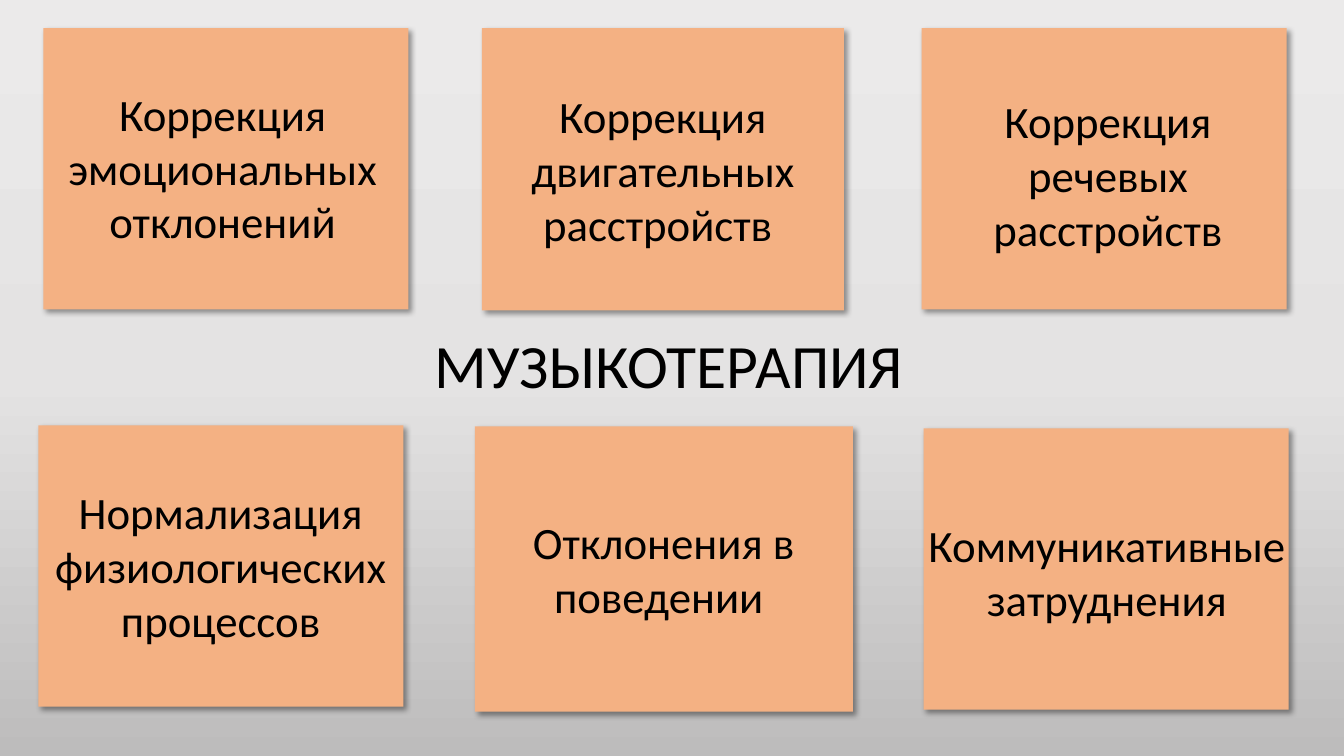
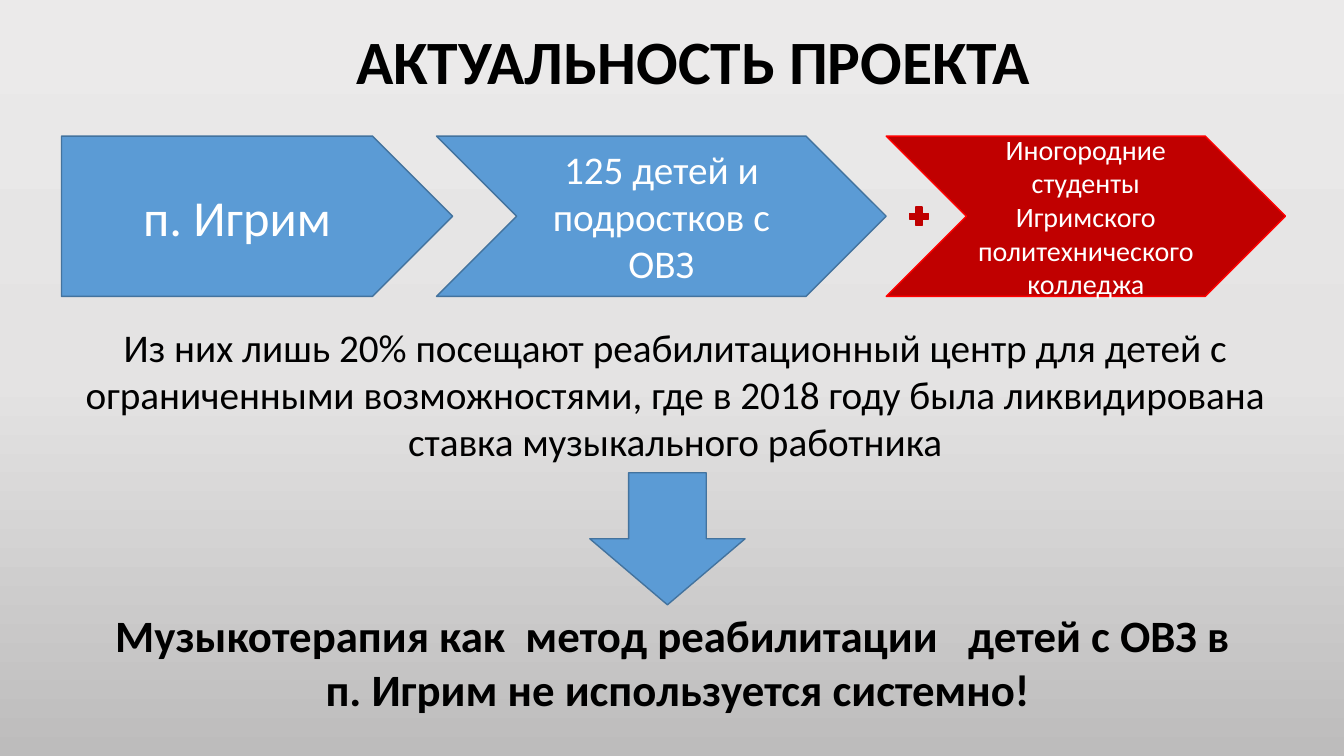
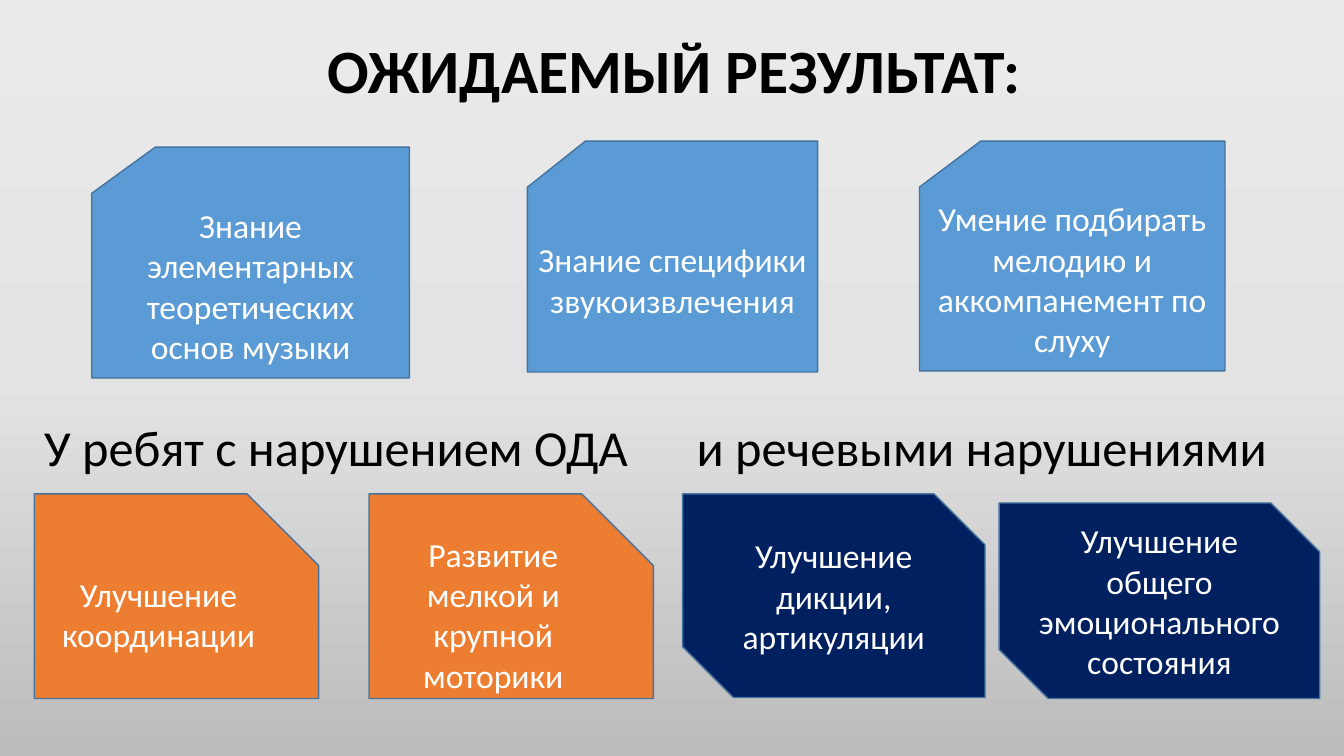
from copy import deepcopy

from lxml import etree
from pptx import Presentation
from pptx.dml.color import RGBColor
from pptx.enum.shapes import MSO_SHAPE
from pptx.enum.text import MSO_ANCHOR, MSO_AUTO_SIZE, PP_ALIGN
from pptx.oxml.ns import qn
from pptx.util import Emu, Pt

EMU_PER_PX = 9144
SLIDE_WIDTH, SLIDE_HEIGHT = 1333, 750
BLANK_LAYOUT = 6
FONT = "Calibri"

BLACK = RGBColor(0x00, 0x00, 0x00)
WHITE = RGBColor(0xFF, 0xFF, 0xFF)
PEACH = RGBColor(0xF4, 0xB1, 0x83)
BLUE = RGBColor(0x5B, 0x9B, 0xD5)
BLUE_EDGE = RGBColor(0x43, 0x73, 0x9E)
DARK_RED = RGBColor(0xC0, 0x00, 0x00)
RED = RGBColor(0xFF, 0x00, 0x00)
ORANGE = RGBColor(0xED, 0x7D, 0x31)
NAVY = RGBColor(0x00, 0x20, 0x60)
BACKDROP = (
    (0, RGBColor(0xEB, 0xEA, 0xEA)),
    (0.5, RGBColor(0xE4, 0xE3, 0xE3)),
    (1, RGBColor(0xBD, 0xBC, 0xBC)),
)

RECTANGLE = MSO_SHAPE.RECTANGLE
PENTAGON = MSO_SHAPE.PENTAGON
CHEVRON = MSO_SHAPE.CHEVRON
PLUS = MSO_SHAPE.MATH_PLUS
DOWN_ARROW = MSO_SHAPE.DOWN_ARROW
PUNCHED_CARD = MSO_SHAPE.FLOWCHART_CARD
SNIP_ONE = MSO_SHAPE.SNIP_1_RECTANGLE
SNIP_DIAGONAL = MSO_SHAPE.SNIP_2_DIAG_RECTANGLE
MIDDLE, TOP = MSO_ANCHOR.MIDDLE, MSO_ANCHOR.TOP
CENTER, LEFT = PP_ALIGN.CENTER, PP_ALIGN.LEFT
GROW, FIXED = MSO_AUTO_SIZE.SHAPE_TO_FIT_TEXT, MSO_AUTO_SIZE.NONE


def px(*lengths):
    """Turn pixel lengths into EMU."""
    return [Emu(length * EMU_PER_PX) for length in lengths]


def assign(target, values):
    """Set each named attribute on the target."""
    for name, value in values.items():
        setattr(target, name, value)


def paint_backdrop(master):
    """Give the slide master its three-stop vertical gradient."""
    fill = master.background.fill
    fill.gradient()
    fill.gradient_angle = 270
    stop_list = master.element.find(".//" + qn("a:gsLst"))
    stop_list.append(deepcopy(stop_list[-1]))
    for stop, (position, color) in zip(fill.gradient_stops, BACKDROP):
        stop.position = position
        stop.color.rgb = color


def write(holder, text, size, color=BLACK, bold=False, align=CENTER,
          spacing=None, **frame_format):
    """Write text into a holder, one paragraph per line."""
    frame = holder.text_frame
    assign(frame, {"word_wrap": True, "vertical_anchor": MIDDLE,
                   "auto_size": FIXED, **frame_format})
    frame.text = text
    for paragraph in frame.paragraphs:
        assign(paragraph, {"alignment": align, "line_spacing": spacing})
        for run in paragraph.runs:
            assign(run.font, {"name": FONT, "size": Pt(size), "bold": bold})
            run.font.color.rgb = color


def add_title(slide, box, text):
    """Add a bold slide title."""
    write(slide.shapes.add_textbox(*px(*box)), text, 44, bold=True, spacing=0.9)


def add_caption(slide, box, text, size, bold=False):
    """Add centred wrapped text without a shape."""
    write(slide.shapes.add_textbox(*px(*box)), text, size, bold=bold,
          vertical_anchor=TOP, auto_size=GROW)


def add_heading(slide, box, text, size):
    """Add a one-line heading that does not wrap."""
    write(slide.shapes.add_textbox(*px(*box)), text, size, align=LEFT,
          vertical_anchor=TOP, auto_size=GROW, word_wrap=False)


def add_figure(slide, kind, box, fill, edge=BLUE_EDGE, text="", size=24,
               cuts=()):
    """Add a filled, outlined shape with white text."""
    figure = slide.shapes.add_shape(kind, *px(*box))
    figure.shadow.inherit = False
    figure.fill.solid()
    figure.fill.fore_color.rgb = fill
    figure.line.color.rgb = edge
    figure.line.width = Pt(1)
    for index, cut in enumerate(cuts):
        figure.adjustments[index] = cut
    if text:
        write(figure, text, size, WHITE)


def add_card(slide, box, text=""):
    """Add a peach card with a soft shadow."""
    card = slide.shapes.add_shape(RECTANGLE, *px(*box))
    card.shadow.inherit = False
    card.fill.solid()
    card.fill.fore_color.rgb = PEACH
    card.line.fill.background()
    effects = card.element.spPr.find(qn("a:effectLst"))
    shadow = etree.SubElement(
        effects, qn("a:outerShdw"), blurRad=str(Pt(4)), dist=str(Pt(3)),
        dir="2700000", algn="tl", rotWithShape="0")
    tint = etree.SubElement(shadow, qn("a:srgbClr"), val=str(BLACK))
    etree.SubElement(tint, qn("a:alpha"), val="40000")
    if text:
        write(card, text, 32)


def build_therapy(slide):
    """Show the six fields of music therapy."""
    for left, top in ((43, 28), (914, 28), (38, 422), (916, 425)):
        add_card(slide, (left, top, 362, 279))
    add_card(slide, (478, 28, 359, 280), "Коррекция двигательных расстройств ")
    add_card(slide, (471, 423, 375, 283), "Отклонения в поведении ")
    captions = (
        ((54, 81, 334, 172), "Коррекция эмоциональных отклонений"),
        ((942, 88, 314, 172), "Коррекция речевых расстройств"),
        ((40, 476, 358, 172), "Нормализация физиологических процессов"),
        ((905, 509, 386, 118), "Коммуникативные затруднения"),
    )
    for box, text in captions:
        add_caption(slide, box, text, 32)
    add_heading(slide, (421, 319, 490, 84), "МУЗЫКОТЕРАПИЯ", 44)


def build_relevance(slide):
    """Show why the project matters."""
    add_title(slide, (113, 15, 1150, 98), "АКТУАЛЬНОСТЬ ПРОЕКТА")
    audience = (
        (PENTAGON, 61, 388, BLUE, BLUE_EDGE, "п. Игрим", 36),
        (CHEVRON, 433, 446, BLUE, BLUE_EDGE, "125 детей и подростков с ОВЗ", 28),
        (CHEVRON, 879, 396, DARK_RED, RED,
         "Иногородние\nстуденты\nИгримского политехнического колледжа", 20),
    )
    for kind, left, width, fill, edge, text, size in audience:
        add_figure(slide, kind, (left, 135, width, 159), fill, edge, text, size)
    add_figure(slide, PLUS, (899, 202, 25, 25), DARK_RED, DARK_RED)
    add_caption(
        slide, (59, 316, 1221, 151),
        "Из них лишь 20% посещают реабилитационный центр для детей с "
        "ограниченными возможностями, где в 2018 году была ликвидирована "
        "ставка музыкального работника", 28)
    add_figure(slide, DOWN_ARROW, (585, 469, 154, 131), BLUE)
    add_caption(
        slide, (62, 598, 1221, 118),
        "Музыкотерапия как  метод реабилитации   детей с ОВЗ в \n"
        "п. Игрим не используется системно!", 32, bold=True)


def build_results(slide):
    """Show the expected results."""
    add_title(slide, (94, 0, 1150, 145), "ОЖИДАЕМЫЙ РЕЗУЛЬТАТ:")
    skills = (
        ((91, 146, 315, 229), "Знание элементарных теоретических основ музыки"),
        ((523, 140, 288, 229), "Знание специфики звукоизвлечения"),
        ((912, 140, 303, 228),
         "Умение подбирать мелодию и аккомпанемент по слуху"),
    )
    for box, text in skills:
        add_figure(slide, PUNCHED_CARD, box, BLUE, text=text)
    add_heading(slide, (34, 408, 605, 71), "У ребят с нарушением ОДА", 36)
    add_heading(slide, (681, 408, 592, 71), "и речевыми нарушениями", 36)
    motor_gains = ("Улучшение координации", "Развитие мелкой и крупной моторики")
    for column, text in enumerate(motor_gains):
        add_figure(slide, SNIP_ONE, (34 + 332 * column, 490, 282, 203), ORANGE,
                   text=text, cuts=(0.35,))
    speech_gains = (
        ((677, 490, 300, 202), "Улучшение дикции, артикуляции"),
        ((991, 499, 318, 194), "Улучшение общего эмоционального состояния"),
    )
    for box, text in speech_gains:
        add_figure(slide, SNIP_DIAGONAL, box, NAVY, text=text, cuts=(0, 0.25))


def main():
    """Build and save the presentation."""
    deck = Presentation()
    deck.slide_width, deck.slide_height = px(SLIDE_WIDTH, SLIDE_HEIGHT)
    paint_backdrop(deck.slide_master)
    for build in (build_therapy, build_relevance, build_results):
        build(deck.slides.add_slide(deck.slide_layouts[BLANK_LAYOUT]))
    deck.save("out.pptx")


if __name__ == "__main__":
    main()
